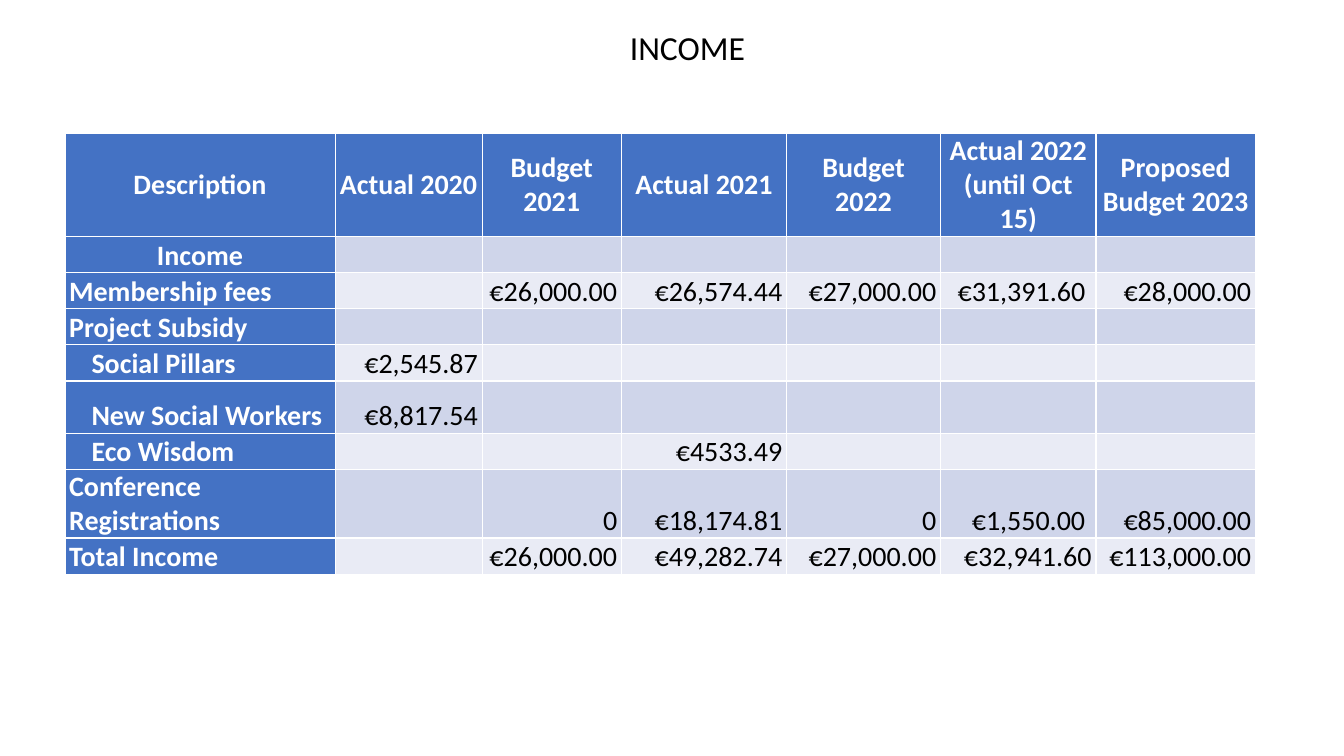
from pptx import Presentation
from pptx.dml.color import RGBColor
from pptx.enum.text import MSO_ANCHOR as Anchor, PP_ALIGN as Align
from pptx.util import Pt

HEADS = ["Description", "Actual 2020", "Budget 2021", "Actual 2021",
         "Budget 2022", "Actual 2022 (until Oct 15)", "Proposed Budget 2023"]
ROWS = [
    ["Income", "", "", "", "", "", ""],
    ["Membership fees", "", "€26,000.00", "€26,574.44", "€27,000.00", "€31,391.60 ", "€28,000.00"],
    ["Project Subsidy", "", "", "", "", "", ""],
    ["Social Pillars", "€2,545.87", "", "", "", "", ""],
    ["New Social Workers", "€8,817.54", "", "", "", "", ""],
    ["Eco Wisdom", "", "", "€4533.49", "", "", ""],
    ["Conference Registrations", "", "0", "€18,174.81", "0", "€1,550.00 ", "€85,000.00"],
    ["Total Income", "", "€26,000.00", "€49,282.74", "€27,000.00", "€32,941.60", "€113,000.00"],
]
SUBS = ["Social Pillars", "New Social Workers", "Eco Wisdom"]
WIDTHS = [193, 105, 99.5, 118, 110, 111, 114]
HEIGHTS = [51, 25.8, 25.8, 25.8, 25.8, 37.4, 25.8, 25.8, 25.8]


def color(code):
    return RGBColor.from_string(code)


class Deck:
    face = "Calibri"
    blue, white, black = "4472C4", "FFFFFF", "000000"
    bands = ["CFD5EA", "E9EBF5"]

    def __init__(self):
        self.prs = Presentation()
        self.prs.slide_width, self.prs.slide_height = Pt(960), Pt(540)
        self.slide = self.prs.slides.add_slide(self.prs.slide_layouts[6])

    def style(self, para, text, size, code, align, bold=False):
        para.text = text
        para.alignment = align
        font = para.font
        font.name, font.size, font.bold = self.face, Pt(size), bold
        font.color.rgb = color(code)

    def title(self, text, left, top, width, height):
        box = self.slide.shapes.add_textbox(Pt(left), Pt(top), Pt(width), Pt(height))
        box.text_frame.word_wrap = True
        self.style(box.text_frame.paragraphs[0], text, 24, self.black, Align.CENTER)

    def cell(self, cell, text, row, col):
        cell.margin_left = cell.margin_right = Pt(3)
        cell.margin_top = cell.margin_bottom = 0
        cell.vertical_anchor = Anchor.BOTTOM if row else Anchor.MIDDLE
        label = row == 0 or col == 0
        cell.fill.solid()
        cell.fill.fore_color.rgb = color(self.blue if label else self.bands[(row - 1) % 2])
        if row == 0 or text == "Income":
            align = Align.CENTER
        else:
            align = Align.RIGHT if col else Align.LEFT
        para = cell.text_frame.paragraphs[0]
        self.style(para, text, 20, self.white if label else self.black, align, label)
        if text in SUBS:
            para._p.get_or_add_pPr().set("marL", str(Pt(16)))

    def table(self, data, left, top, widths, heights):
        frame = self.slide.shapes.add_table(
            len(data), len(widths), Pt(left), Pt(top), Pt(sum(widths)), Pt(sum(heights)))
        table = frame.table
        table.first_col = True
        for col, width in zip(table.columns, widths):
            col.width = Pt(width)
        for row, height in zip(table.rows, heights):
            row.height = Pt(height)
        for row, line in enumerate(data):
            for col, text in enumerate(line):
                self.cell(table.cell(row, col), text, row, col)

    def save(self):
        self.prs.save("out.pptx")


def main():
    deck = Deck()
    deck.table([HEADS] + ROWS, 46.4, 95.4, WIDTHS, HEIGHTS)
    deck.title("INCOME", 205, 16, 572, 36)
    deck.save()


if __name__ == "__main__":
    main()
